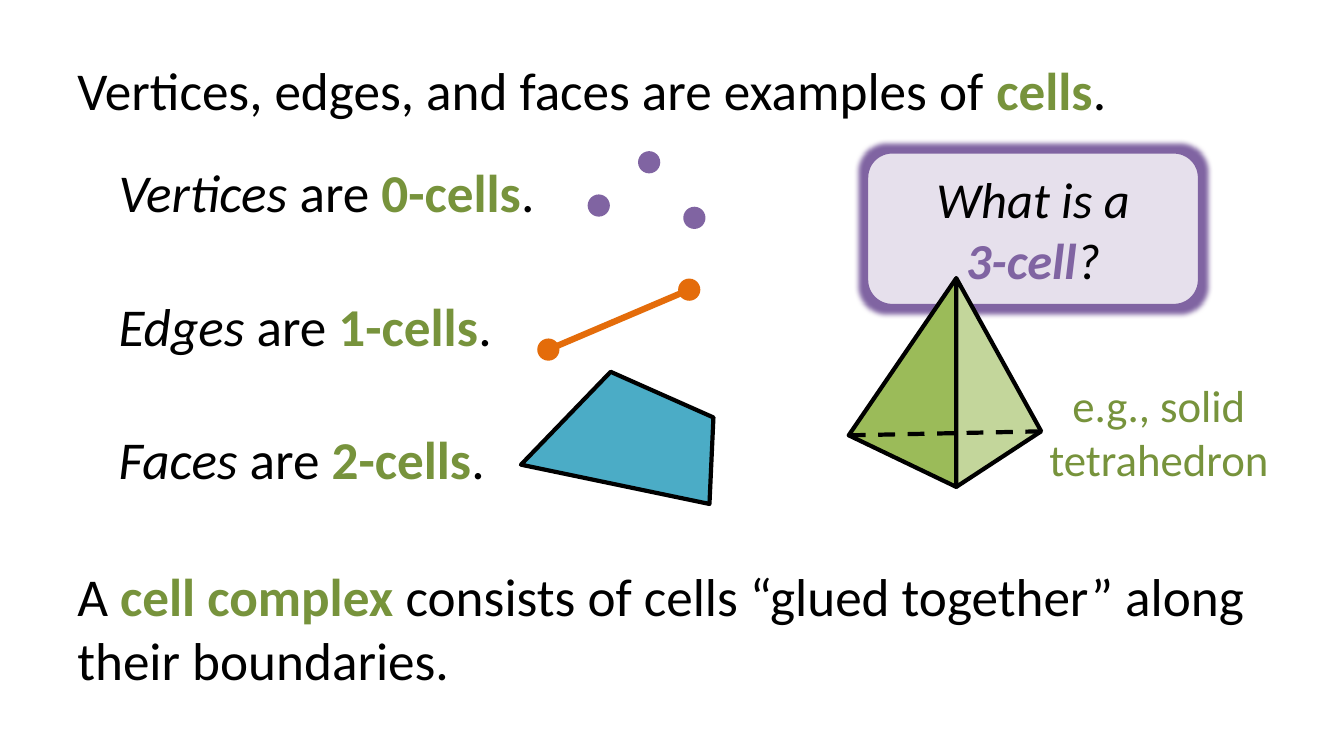
"""Build the slide that introduces cells and cell complexes."""
from lxml import etree
from pptx import Presentation
from pptx import util as u
from pptx.dml.color import RGBColor
from pptx.enum import dml, shapes, text
from pptx.oxml.ns import qn

BLACK, PURPLE, ORANGE, GREEN = "000000", "8064A2", "E46C0A", "77933C"
DOT = 0.56
PLAIN = (BLACK, False, False)
ITALIC = (BLACK, False, True)
TERM = (GREEN, True, False)


def rgb(code):
    """Return the colour of a hex string."""
    return RGBColor.from_string(code)


def cm(*lengths):
    """Return the lengths as centimetres."""
    return [u.Cm(length) for length in lengths]


def write(frame, size, runs, align=text.PP_ALIGN.LEFT):
    """Fill a text frame with one paragraph of (wording, style) runs."""
    paragraph = frame.paragraphs[0]
    paragraph.alignment = align
    paragraph.font.name = "Calibri"
    paragraph.font.size = u.Pt(size)
    for wording, (color, bold, italic) in runs:
        run = paragraph.add_run()
        run.text = wording
        run.font.color.rgb = rgb(color)
        run.font.bold, run.font.italic = bold, italic


def add_text(parent, box, size, runs, align=text.PP_ALIGN.LEFT, wrap=True):
    """Add a text box that grows with its text."""
    frame = parent.add_textbox(*cm(*box)).text_frame
    frame.word_wrap = wrap
    frame.auto_size = text.MSO_AUTO_SIZE.SHAPE_TO_FIT_TEXT
    write(frame, size, runs, align)


def paint(shape, fill, line=None, width=0):
    """Give a shape a flat fill and an optional outline."""
    shape.shadow.inherit = False
    shape.fill.solid()
    shape.fill.fore_color.rgb = rgb(fill)
    if line:
        shape.line.color.rgb = rgb(line)
        shape.line.width = u.Pt(width)
    else:
        shape.line.fill.background()


def add_dot(parent, center, color):
    """Add a round point around its center."""
    left, top = (value - DOT / 2 for value in center)
    dot = parent.add_shape(shapes.MSO_SHAPE.OVAL, *cm(left, top, DOT, DOT))
    paint(dot, color)


def add_polygon(parent, corners, fill):
    """Add a closed, black-edged polygon."""
    start, *others = [cm(*corner) for corner in corners]
    builder = parent.build_freeform(*start)
    builder.add_line_segments(others, close=True)
    paint(builder.convert_to_shape(), fill, BLACK, 3)


def add_line(parent, start, end, color, width, dash=None):
    """Add a straight line without shadow."""
    line = parent.add_connector(shapes.MSO_CONNECTOR.STRAIGHT, *cm(*start, *end))
    line.line.color.rgb = rgb(color)
    line.line.width = u.Pt(width)
    if dash:
        line.line.dash_style = dash
    etree.SubElement(line._element.spPr, qn("a:effectLst"))


def add_question(parent):
    """Add the glowing card that asks about 3-cells."""
    card = parent.add_shape(shapes.MSO_SHAPE.ROUNDED_RECTANGLE, *cm(21.82, 3.81, 8.43, 3.91))
    card.adjustments[0] = 0.17
    paint(card, "E6E0EC", PURPLE, 3.5)
    effects = card._element.spPr.find(qn("a:effectLst"))
    glow = etree.SubElement(effects, qn("a:glow"), rad=str(u.Pt(8)))
    etree.SubElement(glow, qn("a:srgbClr"), val=PURPLE)
    frame = card.text_frame
    frame.word_wrap = True
    frame.margin_left = frame.margin_right = u.Cm(1.3)
    runs = [("What is a ", ITALIC), ("3-cell", (PURPLE, True, True)), ("?", ITALIC)]
    write(frame, 36, runs, text.PP_ALIGN.CENTER)


def add_tetrahedron(parent):
    """Add the solid tetrahedron with its hidden back edge."""
    solid = parent.add_group_shape().shapes
    apex, base, left, right = (24.1, 7.01), (24.1, 12.27), (21.39, 10.97), (26.24, 10.87)
    add_polygon(solid, [apex, base, left], "9BBB59")
    add_polygon(solid, [apex, base, right], "C3D69B")
    add_line(solid, left, right, BLACK, 3, dml.MSO_LINE.DASH)


def main():
    """Build and save the slide."""
    deck = Presentation()
    deck.slide_width, deck.slide_height = cm(33.87, 19.05)
    canvas = deck.slides.add_slide(deck.slide_layouts[6]).shapes

    add_question(canvas)
    add_text(canvas, (1.7, 1.32, 30.48, 1.88), 38, [
        ("Vertices, edges, and faces are examples of ", PLAIN), ("cells", TERM), (".", PLAIN)])
    for dimension, (cell, width) in enumerate([("Vertices", 11.1), ("Edges", 10), ("Faces", 9.83)]):
        add_text(canvas, (2.74, 3.89 + 3.365 * dimension, width, 1.88), 38, [
            (cell, ITALIC), (" are ", PLAIN), (f"{dimension}-cells", TERM), (".", PLAIN)], wrap=False)
    add_text(canvas, (1.7, 14.07, 30.48, 3.51), 38, [
        ("A ", PLAIN), ("cell complex ", TERM),
        ("consists of cells “glued together” along their boundaries.", PLAIN)])

    for vertex in [(15.09, 5.18), (16.36, 4.09), (17.5, 5.49)]:
        add_dot(canvas, vertex, PURPLE)

    edge = canvas.add_group_shape().shapes
    ends = [(13.82, 8.81), (17.37, 7.3)]
    add_line(edge, *ends, ORANGE, 4.5)
    for end in ends:
        add_dot(edge, end, ORANGE)

    add_polygon(canvas, [(13.13, 11.71), (15.39, 9.37), (17.98, 10.52), (17.88, 12.7)], "4BACC6")
    add_tetrahedron(canvas)
    add_text(canvas, (25.5, 9.4, 7.42, 3), 32,
             [("e.g., solid tetrahedron", (GREEN, False, False))], text.PP_ALIGN.CENTER)
    deck.save("out.pptx")


if __name__ == "__main__":
    main()
